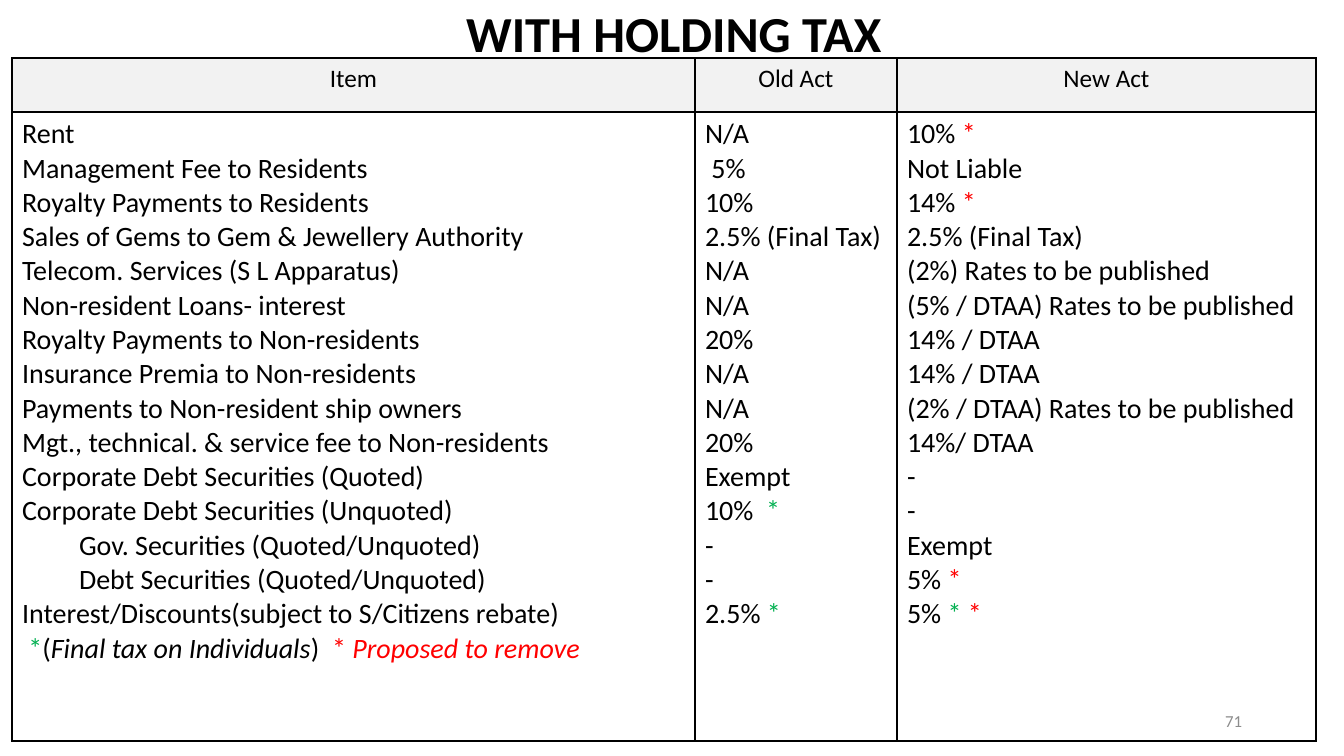
"""Builds the withholding tax comparison slide."""
from lxml import etree
from pptx import Presentation
from pptx.dml.color import RGBColor
from pptx.enum.text import MSO_ANCHOR, PP_ALIGN
from pptx.oxml.ns import qn
from pptx.util import Emu, Pt

CENTER, LEFT, RIGHT = PP_ALIGN.CENTER, PP_ALIGN.LEFT, PP_ALIGN.RIGHT
MIDDLE = MSO_ANCHOR.MIDDLE
BLACK = RGBColor(0x00, 0x00, 0x00)
WHITE = RGBColor(0xFF, 0xFF, 0xFF)
HEADER_GRAY = RGBColor(0xF2, 0xF2, 0xF2)
NUMBER_GRAY = RGBColor(0x8C, 0x8C, 0x8C)
GREEN = RGBColor(0x00, 0xB0, 0x50)
RED = RGBColor(0xFF, 0x00, 0x00)
FONT = "Calibri"

TITLE = "WITH HOLDING TAX"
PAGE_NUMBER = "71"
HEADINGS = ("Item", "Old Act", "New Act")
FINAL = ("*", GREEN)
REMOVE = ("*", RED)
RATES = [
    ("Rent", "N/A", ["10% ", REMOVE]),
    ("Management Fee to Residents", " 5%", "Not Liable"),
    ("Royalty Payments to Residents", "10%", ["14% ", REMOVE]),
    ("Sales of Gems to Gem & Jewellery Authority", "2.5% (Final Tax)", "2.5% (Final Tax)"),
    ("Telecom. Services (S L Apparatus)", "N/A", "(2%) Rates to be published"),
    ("Non-resident Loans- interest", "N/A", "(5% / DTAA) Rates to be published"),
    ("Royalty Payments to Non-residents", "20%", "14% / DTAA"),
    ("Insurance Premia to Non-residents", "N/A", "14% / DTAA"),
    ("Payments to Non-resident ship owners", "N/A", "(2% / DTAA) Rates to be published"),
    ("Mgt., technical. & service fee to Non-residents", "20%", "14%/ DTAA"),
    ("Corporate Debt Securities (Quoted)", "Exempt", "-"),
    ("Corporate Debt Securities (Unquoted)", ["10%  ", FINAL], "-"),
    ("Gov. Securities (Quoted/Unquoted)", "-", "Exempt"),
    ("Debt Securities (Quoted/Unquoted)", "-", ["5% ", REMOVE]),
    ("Interest/Discounts(subject to S/Citizens rebate)", ["2.5% ", FINAL],
     ["5% ", ("* ", GREEN), REMOVE]),
]
INDENTED = {"Gov. Securities (Quoted/Unquoted)", "Debt Securities (Quoted/Unquoted)"}
LEGEND = [" ", FINAL, "(", ("Final tax on Individuals", BLACK, True), ")  ",
          ("* ", RED), ("Proposed to remove", RED, True)]

SLIDE_SIZE = (1344, 756)
TITLE_BOX = (48, 15, 1252, 43)
NUMBER_BOX = (950, 701, 302, 40)
TABLE_ORIGIN = (12, 58)
COLUMN_WIDTHS = (683, 202, 419)
ROW_HEIGHTS = (54, 629)
SUB_ITEM_INDENT = 57
EMU_PER_PX = 914400 / 100.8


def px(length):
    return Emu(round(length * EMU_PER_PX))


def write_line(paragraph, content, size, align=LEFT, color=BLACK, bold=False):
    paragraph.alignment = align
    for part in [content] if isinstance(content, str) else content:
        words, shade, italic = ((part, color) if isinstance(part, str) else part + (False,))[:2] + (
            not isinstance(part, str) and len(part) == 3,)
        run = paragraph.add_run()
        run.text = words
        run.font.name, run.font.size = FONT, Pt(size)
        run.font.bold, run.font.italic = bold, italic
        run.font.color.rgb = shade


def add_label(slide, box, content, size, align, color=BLACK, bold=False):
    frame = slide.shapes.add_textbox(*map(px, box)).text_frame
    frame.word_wrap = True
    frame.vertical_anchor = MIDDLE
    write_line(frame.paragraphs[0], content, size, align, color, bold)
    return frame.paragraphs[0]


def style_cell(cell, color):
    properties = cell._tc.get_or_add_tcPr()
    for side in ("a:lnL", "a:lnR", "a:lnT", "a:lnB"):
        border = etree.SubElement(properties, qn(side), w=str(Pt(1)))
        solid = etree.SubElement(border, qn("a:solidFill"))
        etree.SubElement(solid, qn("a:srgbClr"), val=str(BLACK))
    cell.fill.solid()
    cell.fill.fore_color.rgb = color


def add_rates_table(slide):
    table = slide.shapes.add_table(
        len(ROW_HEIGHTS), len(COLUMN_WIDTHS), *map(px, TABLE_ORIGIN),
        px(sum(COLUMN_WIDTHS)), px(sum(ROW_HEIGHTS))).table
    table.first_row = table.horz_banding = False
    for row, height in zip(table.rows, ROW_HEIGHTS):
        row.height = px(height)
    columns = [list(column) for column in zip(*RATES)]
    columns[0].append(LEGEND)
    for index, (heading, lines) in enumerate(zip(HEADINGS, columns)):
        table.columns[index].width = px(COLUMN_WIDTHS[index])
        head, body = table.cell(0, index), table.cell(1, index)
        style_cell(head, HEADER_GRAY)
        style_cell(body, WHITE)
        write_line(head.text_frame.paragraphs[0], heading, 18, CENTER)
        for number, line in enumerate(lines):
            frame = body.text_frame
            paragraph = frame.add_paragraph() if number else frame.paragraphs[0]
            write_line(paragraph, line, 20)
            if isinstance(line, str) and line in INDENTED:
                paragraph._p.get_or_add_pPr().set("marL", str(px(SUB_ITEM_INDENT)))


def main():
    deck = Presentation()
    deck.slide_width, deck.slide_height = map(px, SLIDE_SIZE)
    slide = deck.slides.add_slide(deck.slide_layouts[6])
    title = add_label(slide, TITLE_BOX, TITLE, 36, CENTER, bold=True)
    title.line_spacing = 0.9
    add_rates_table(slide)
    add_label(slide, NUMBER_BOX, PAGE_NUMBER, 12, RIGHT, NUMBER_GRAY)
    deck.save("out.pptx")


if __name__ == "__main__":
    main()
